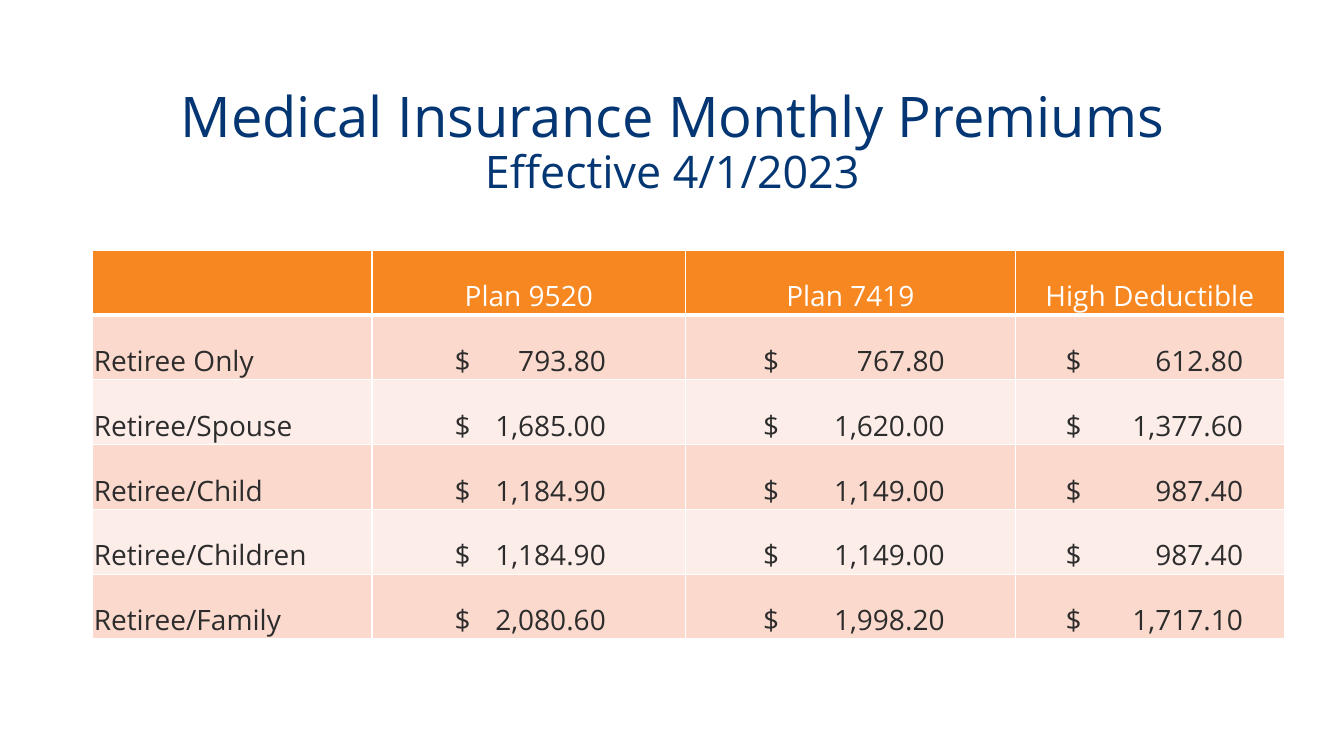
from lxml import etree
from pptx import Presentation
from pptx import util as u
from pptx.dml.color import RGBColor
from pptx.enum import text
from pptx.oxml import ns

FONT = "Open Sans"
NAVY, WHITE, INK, ORANGE = "043673", "FFFFFF", "2C2C2C", "F68721"
BANDS = ["FBD9CD", "FDEDE8"]
LEFT = 0.92

PLANS = ["", "Plan 9520", "Plan 7419", "High Deductible"]
PREMIUMS = [
    ("Retiree Only", "793.80", "767.80", "612.80"),
    ("Retiree/Spouse", "1,685.00", "1,620.00", "1,377.60"),
    ("Retiree/Child", "1,184.90", "1,149.00", "987.40"),
    ("Retiree/Children", "1,184.90", "1,149.00", "987.40"),
    ("Retiree/Family", "2,080.60", "1,998.20", "1,717.10"),
]
COLUMN_WIDTHS = [2.77, 3.11, 3.27, 2.67]
# Per column: inset of the dollar sign, and distance from it to the end of the amount
MONEY_STOPS = [None, (0.82, 1.5), (0.77, 1.8), (0.5, 1.76)]


def colour(value):
    return RGBColor.from_string(value)


def add_span(para, words, size=20, ink=INK):
    span = para.add_run()
    span.text = words
    span.font.name, span.font.size = FONT, u.Pt(size)
    span.font.color.rgb = colour(ink)


def add_right_tab(para, position):
    tabs = etree.SubElement(para._p.get_or_add_pPr(), ns.qn("a:tabLst"))
    etree.SubElement(tabs, ns.qn("a:tab"), pos=str(u.Inches(position)), algn="r")


def set_borders(cell, **points):
    """Draw white cell borders; call before the fill, which must follow them."""
    properties = cell._tc.get_or_add_tcPr()
    for side in "LRTB":
        line = etree.SubElement(properties, ns.qn(f"a:ln{side}"),
                                w=str(u.Pt(points.get(side, 1))))
        fill = etree.SubElement(line, ns.qn("a:solidFill"))
        etree.SubElement(fill, ns.qn("a:srgbClr"), val=WHITE)


def add_heading(page, left, top, width, height):
    box = page.shapes.add_textbox(*map(u.Inches, (left, top, width, height)))
    frame = box.text_frame
    frame.word_wrap = True
    frame.vertical_anchor = text.MSO_ANCHOR.MIDDLE
    para = frame.paragraphs[0]
    para.alignment = text.PP_ALIGN.CENTER
    para.line_spacing = 0.9
    add_span(para, "Medical Insurance Monthly Premiums", size=40, ink=NAVY)
    para.add_line_break()
    add_span(para, "Effective 4/1/2023", size=32, ink=NAVY)


def fill_cell(cell, words, row, column):
    is_header = row == 0
    is_money = not is_header and column > 0
    set_borders(cell, T=3 if row == 1 else 1, B=3 if is_header else 1)
    cell.fill.solid()
    cell.fill.fore_color.rgb = colour(ORANGE if is_header else BANDS[(row - 1) % 2])
    cell.vertical_anchor = text.MSO_ANCHOR.BOTTOM
    cell.margin_left = cell.margin_right = cell.margin_top = u.Inches(0.01)
    cell.margin_bottom = 0
    para = cell.text_frame.paragraphs[0]
    if is_header:
        para.alignment = text.PP_ALIGN.CENTER
    if is_money:
        inset, stop = MONEY_STOPS[column]
        cell.margin_left = u.Inches(inset)
        add_right_tab(para, stop)
        words = f"$\t{words}"
    if words:
        add_span(para, words, ink=WHITE if is_header else INK)


def add_premium_table(page, left, top, width, height):
    rows = [PLANS, *PREMIUMS]
    frame = page.shapes.add_table(len(rows), len(PLANS),
                                  *map(u.Inches, (left, top, width, height)))
    table = frame.table
    for column, share in zip(table.columns, COLUMN_WIDTHS):
        column.width = u.Inches(width * share / sum(COLUMN_WIDTHS))
    for row, values in enumerate(rows):
        for column, words in enumerate(values):
            fill_cell(table.cell(row, column), words, row, column)


def main():
    deck = Presentation()
    deck.slide_width, deck.slide_height = u.Inches(13.33), u.Inches(7.5)
    page = deck.slides.add_slide(deck.slide_layouts[6])
    add_heading(page, LEFT, 0.7, 11.5, 1.45)
    add_premium_table(page, LEFT, 2.48, sum(COLUMN_WIDTHS), 3.86)
    deck.save("out.pptx")


if __name__ == "__main__":
    main()
